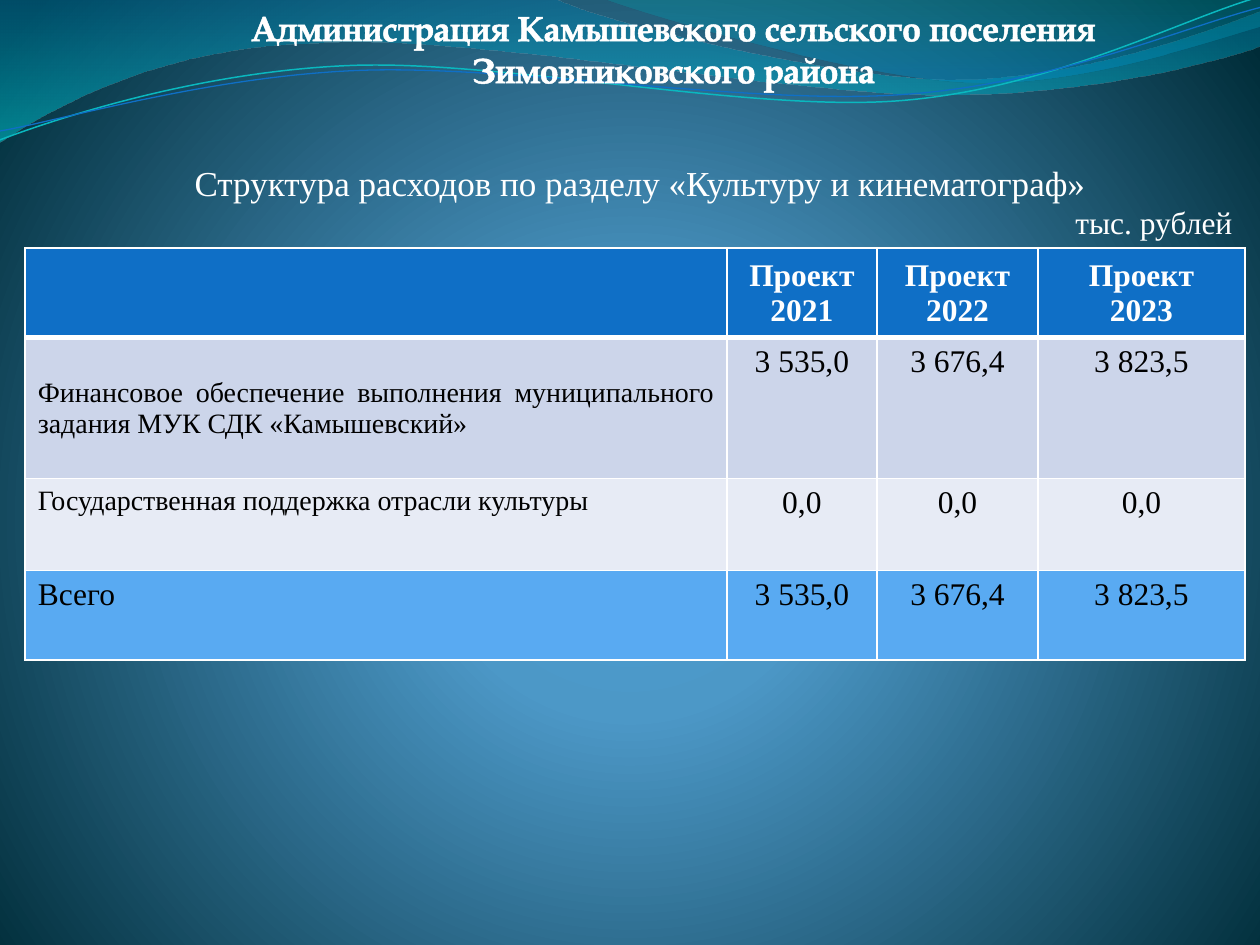
from math import cos, radians, sin

from lxml.etree import SubElement
from pptx import Presentation
from pptx.dml.color import RGBColor
from pptx.enum.text import MSO_ANCHOR, MSO_AUTO_SIZE, PP_ALIGN
from pptx.oxml import parse_xml
from pptx.oxml.ns import nsdecls, qn
from pptx.util import Inches, Pt

SERIF = "Times New Roman"
WHITE = "FFFFFF"
BLUE = "0F6FC6"

WIDE_WAVE = [
    [(0, 0)],
    [(4.4, -0.01)],
    [(4.76, 0.17), (6.64, 0.63), (7.58, 0.63)],
    [(8.53, 0.63), (9.58, 0.26), (10, 0.09)],
    [(10.01, 0.36)],
    [(9.83, 0.44), (8.7, 0.76), (7.46, 0.75)],
    [(6.22, 0.75), (3.82, 0.28), (2.57, 0.34)],
    [(1.29, 0.36), (0.46, 0.83), (-0.01, 1.13)],
    [(0, 0)],
]
RIGHT_WAVE = [
    [(4.79, -0.01)],
    [(5.09, 0.11), (6.82, 0.62), (7.69, 0.65)],
    [(8.56, 0.69), (9.61, 0.32), (10, 0.21)],
    [(10, 0)],
    [(4.79, -0.01)],
]
TEAL_STRAND = [
    [(0, 1.11)],
    [(0.48, 0.93), (1.58, 0.57), (2.77, 0.52)],
    [(3.95, 0.47), (5.93, 0.89), (7.13, 0.8)],
    [(8.33, 0.71), (9.38, 0.15), (9.98, -0.02)],
]
BLUE_STRAND = [
    [(0, 1.04)],
    [(0.47, 0.96), (1.64, 0.61), (2.83, 0.56)],
    [(4.03, 0.51), (5.97, 0.84), (7.17, 0.75)],
    [(8.36, 0.67), (9.41, 0.21), (10, 0.06)],
]

HEADINGS = ["", "Проект\n2021", "Проект\n2022", "Проект\n2023"]
TOTALS = ["3 535,0", "3 676,4", "3 823,5"]
EXPENSES = [
    HEADINGS,
    ["Финансовое обеспечение выполнения муниципального задания "
     "МУК СДК «Камышевский»", *TOTALS],
    ["Государственная поддержка отрасли культуры", "0,0", "0,0", "0,0"],
    ["Всего", *TOTALS],
]
COLUMN_WIDTHS = [5.57, 1.19, 1.28, 1.64]
ROW_HEIGHTS = [0.71, 1.12, 0.73, 0.71]
ROW_FILLS = [BLUE, "CCD5EA", "E7EBF5", "59AAF2"]
LABEL_SIZES = [18, 16, 16, 18]


def color(hex_value):
    return RGBColor.from_string(hex_value)


def gradient(stops, direction):
    marks = "".join(
        f'<a:gs pos="{position * 1000}"><a:srgbClr val="{shade}">'
        f'<a:alpha val="{alpha * 1000}"/></a:srgbClr></a:gs>'
        for position, shade, alpha in stops
    )
    return parse_xml(
        f'<a:gradFill {nsdecls("a")} rotWithShape="1">'
        f"<a:gsLst>{marks}</a:gsLst>{direction}</a:gradFill>"
    )


def replace_gradient(fill, parent, stops, direction):
    fill.gradient()
    parent.replace(parent.find(qn("a:gradFill")), gradient(stops, direction))


def paint_background(slide):
    fill = slide.background.fill
    properties = slide._element.cSld.find(qn("p:bg")).find(qn("p:bgPr"))
    replace_gradient(
        fill, properties,
        [(0, "4AA0D6", 100), (25, "4C98C7", 100), (100, "002C38", 100)],
        '<a:path path="circle"><a:fillToRect l="10000" t="110000" '
        'r="10000" b="100000"/></a:path>',
    )


def turn(segments, center, degrees):
    c, s = cos(radians(degrees)), sin(radians(degrees))
    cx, cy = center
    return [[(cx + (x - cx) * c - (y - cy) * s, cy + (x - cx) * s + (y - cy) * c)
             for x, y in segment] for segment in segments]


def add_outline(slide, segments, close):
    corners = [(Inches(x), Inches(y)) for segment in segments for x, y in segment]
    builder = slide.shapes.build_freeform(*corners[0])
    builder.add_line_segments(corners[1:], close=close)
    outline = builder.convert_to_shape()
    outline.shadow.inherit = False
    steps = iter(list(outline._element.iter(qn("a:lnTo"))))
    for segment in segments[1:]:
        legs = [next(steps) for _ in segment]
        if len(legs) == 3:
            curve = parse_xml(f'<a:cubicBezTo {nsdecls("a")}/>')
            legs[0].addprevious(curve)
            for leg in legs:
                curve.append(leg[0])
                leg.getparent().remove(leg)
    return outline


def add_wave(slide, segments, stops):
    wave = add_outline(slide, segments, True)
    replace_gradient(wave.fill, wave._element.spPr, stops,
                     '<a:lin ang="5400000" scaled="1"/>')
    wave.line.fill.background()


def add_strand(slide, segments, center, shade, width):
    tilt = -2.7
    strand = add_outline(slide, turn(segments, center, -tilt), False)
    strand.rotation = tilt
    strand.fill.background()
    strand.line.color.rgb = color(shade)
    strand.line.width = Pt(width)


def write(frame, lines, align, size, shade, bold=False, font=SERIF):
    frame.text = "\n".join(lines)
    for paragraph, alignment in zip(frame.paragraphs, align):
        paragraph.alignment = alignment
        paragraph.font.name = font
        paragraph.font.size = Pt(size)
        paragraph.font.bold = bold
        paragraph.font.color.rgb = color(shade)


def add_text(slide, box, lines, align, **style):
    frame = slide.shapes.add_textbox(*map(Inches, box)).text_frame
    frame.word_wrap = True
    frame.auto_size = MSO_AUTO_SIZE.SHAPE_TO_FIT_TEXT
    write(frame, lines, align, size=20, shade=WHITE, **style)
    return frame


def add_title(slide):
    frame = add_text(slide, (1.54, 0, 7.61, 0.77),
                     ["Администрация Камышевского сельского поселения "
                      "Зимовниковского района"],
                     [PP_ALIGN.CENTER], bold=True, font="TeX Gyre Pagella")
    frame.paragraphs[0].runs[0]._r.get_or_add_rPr().insert(0, parse_xml(
        f'<a:ln {nsdecls("a")} w="{Pt(1.45)}"><a:solidFill>'
        f'<a:srgbClr val="{WHITE}"/></a:solidFill></a:ln>'))


def set_borders(cell, widths):
    properties = cell._tc.get_or_add_tcPr()
    for index, (side, width) in enumerate(zip("LRTB", widths)):
        border = parse_xml(
            f'<a:ln{side} {nsdecls("a")} w="{Pt(width)}"/>')
        SubElement(SubElement(border, qn("a:solidFill")),
                   qn("a:srgbClr")).set("val", WHITE)
        properties.insert(index, border)


def add_expenses(slide):
    table = slide.shapes.add_table(
        len(EXPENSES), len(HEADINGS), Inches(0.2), Inches(1.97),
        Inches(sum(COLUMN_WIDTHS)), Inches(sum(ROW_HEIGHTS))).table
    for column, width in zip(table.columns, COLUMN_WIDTHS):
        column.width = Inches(width)
    for r, values in enumerate(EXPENSES):
        table.rows[r].height = Inches(ROW_HEIGHTS[r])
        for c, value in enumerate(values):
            cell = table.cell(r, c)
            cell.fill.solid()
            cell.fill.fore_color.rgb = color(ROW_FILLS[r])
            set_borders(cell, (1, 1, 3 if r == 1 else 1, 3 if r == 0 else 1))
            if r == 0 or (r, c) == (1, 0):
                cell.vertical_anchor = MSO_ANCHOR.MIDDLE
            label_align = PP_ALIGN.JUSTIFY if r == 1 else PP_ALIGN.LEFT
            align = PP_ALIGN.CENTER if c else label_align
            lines = value.split("\n")
            write(cell.text_frame, lines, [align] * len(lines),
                  18 if c else LABEL_SIZES[r],
                  "000000" if r else WHITE, bold=r == 0)


def main():
    presentation = Presentation()
    presentation.slide_width, presentation.slide_height = Inches(10), Inches(7.5)
    slide = presentation.slides.add_slide(presentation.slide_layouts[6])
    paint_background(slide)
    add_wave(slide, WIDE_WAVE, [(0, "0074A1", 45), (100, "00C6CF", 55)])
    add_wave(slide, RIGHT_WAVE, [(0, "00A1A9", 30), (80, "008BBF", 45)])
    add_strand(slide, TEAL_STRAND, (4.99, 0.57), "0AB8BF", 0.85)
    add_strand(slide, BLUE_STRAND, (5, 0.59), BLUE, 0.75)
    add_expenses(slide)
    subtitle = add_text(slide, (0.35, 1.23, 9.53, 0.74),
                        ["Структура расходов по разделу «Культуру и кинематограф» ",
                         "тыс. рублей"],
                        [PP_ALIGN.CENTER, PP_ALIGN.RIGHT])
    subtitle.paragraphs[1].font.size = Pt(18)
    add_title(slide)
    presentation.save("out.pptx")


if __name__ == "__main__":
    main()
